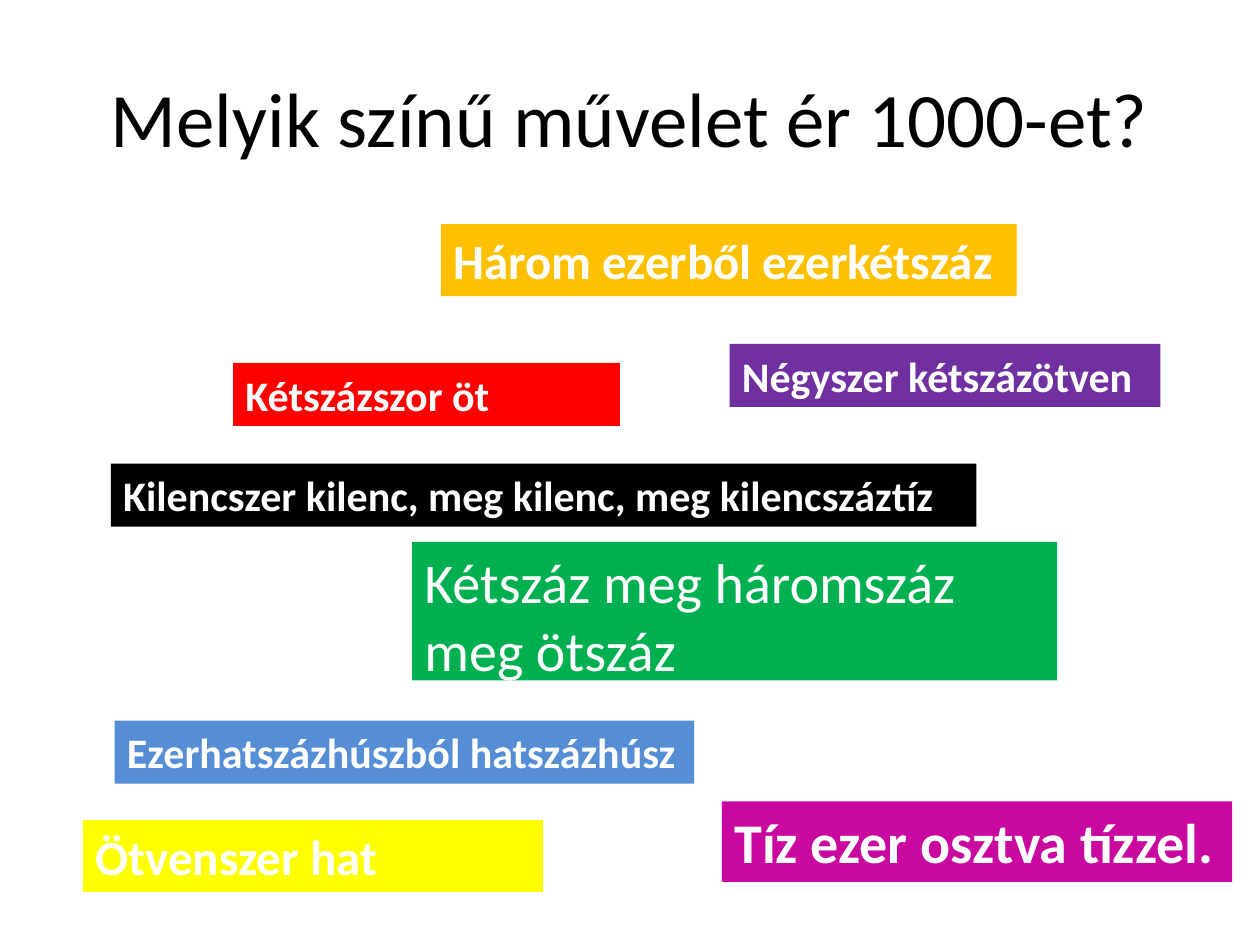
from pptx import Presentation
from pptx.dml.color import RGBColor as RGB
from pptx.enum.text import MSO_ANCHOR as Anchor, MSO_AUTO_SIZE as Auto, PP_ALIGN as Align
from pptx.util import Emu, Pt

PX = 9144
FONT = "Calibri"
WHITE = RGB(0xFF, 0xFF, 0xFF)
BLACK = RGB(0x00, 0x00, 0x00)
GREEN = RGB(0x00, 0xB0, 0x50)
AMBER = RGB(0xFF, 0xC0, 0x00)
RED = RGB(0xFF, 0x00, 0x00)
BLUE = RGB(0x55, 0x8E, 0xD5)
PURPLE = RGB(0x70, 0x30, 0xA0)
PINK = RGB(0xC8, 0x08, 0x9F)
YELLOW = RGB(0xFF, 0xFF, 0x00)

TITLE = (50, 30, 900, 125)
SUMS = [
    ((327, 430, 512, 110), "Kétszáz meg háromszáz meg ötszáz", GREEN, 32, False, True),
    ((350, 178, 457, 57), "Három ezerből ezerkétszáz", AMBER, 28, True, True),
    ((185, 288, 307, 50), "Kétszázszor öt", RED, 24, True, True),
    ((91, 572, 460, 50), "Ezerhatszázhúszból hatszázhúsz", BLUE, 24, True, False),
    ((579, 273, 342, 50), "Négyszer kétszázötven", PURPLE, 24, True, True),
    ((573, 636, 405, 64), "Tíz ezer osztva tízzel.", PINK, 32, True, False),
    ((88, 368, 687, 50), "Kilencszer kilenc, meg kilenc, meg kilencszáztíz", BLACK, 24, True, True),
    ((66, 651, 365, 57), "Ötvenszer hat", YELLOW, 28, True, True),
]


def add_text(slide, box, text, size, color, bold=False, wrap=True):
    shape = slide.shapes.add_textbox(*(Emu(n * PX) for n in box))
    frame = shape.text_frame
    frame.text = text
    frame.word_wrap = wrap
    font = frame.paragraphs[0].runs[0].font
    font.name = FONT
    font.size = Pt(size)
    font.bold = bold
    font.color.rgb = color
    return shape


def add_title(slide, box):
    frame = add_text(slide, box, "Melyik színű művelet ér 1000-et?", 44, BLACK).text_frame
    frame.vertical_anchor = Anchor.MIDDLE
    frame.paragraphs[0].alignment = Align.CENTER


def add_sum(slide, box, text, fill, size, bold, wrap):
    shape = add_text(slide, box, text, size, WHITE, bold, wrap)
    shape.fill.solid()
    shape.fill.fore_color.rgb = fill
    shape.text_frame.auto_size = Auto.SHAPE_TO_FIT_TEXT if bold else Auto.NONE


def main():
    deck = Presentation()
    deck.slide_width = Emu(1000 * PX)
    deck.slide_height = Emu(750 * PX)
    slide = deck.slides.add_slide(deck.slide_layouts[6])
    add_title(slide, TITLE)
    for item in SUMS:
        add_sum(slide, *item)
    deck.save("out.pptx")


if __name__ == "__main__":
    main()
